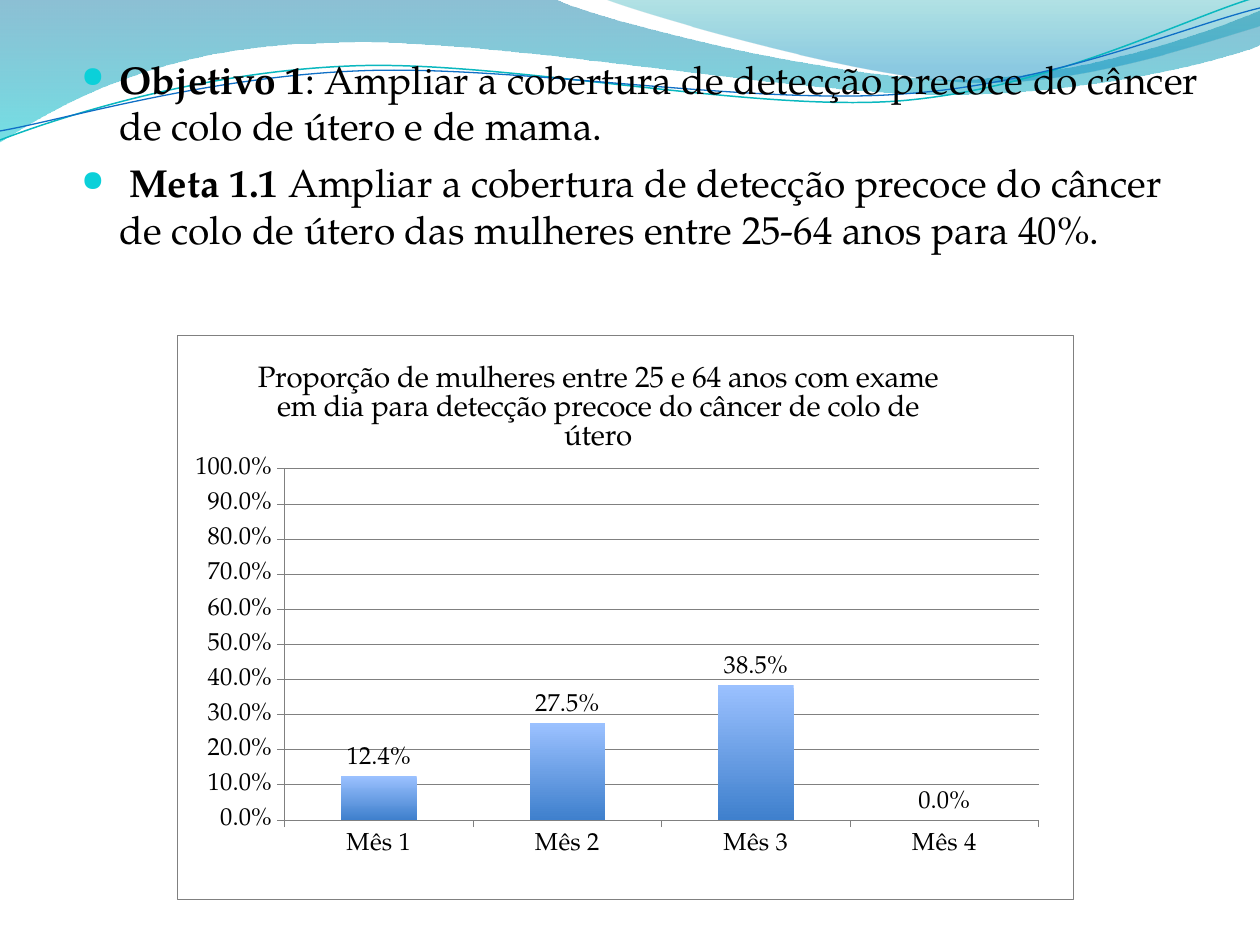
from pptx import Presentation
from pptx.chart.data import CategoryChartData
from pptx.dml.color import RGBColor
from pptx.enum.chart import XL_CHART_TYPE, XL_LABEL_POSITION, XL_TICK_MARK
from pptx.oxml import parse_xml
from pptx.oxml.ns import nsdecls, qn
from pptx.util import Emu, Pt

FONT = "TeX Gyre Pagella"
BLACK = RGBColor(0x00, 0x00, 0x00)
GRAY = RGBColor(0x80, 0x80, 0x80)
BULLET = RGBColor(0x0B, 0xD0, 0xD9)
TEAL = RGBColor(0x0A, 0xB8, 0xBF)
BLUE = RGBColor(0x0F, 0x6F, 0xC6)
WAVE_BLUE = RGBColor(0x00, 0x74, 0xA1)
WAVE_CYAN = RGBColor(0x00, 0xC6, 0xCF)
CREST_TEAL = RGBColor(0x00, 0xA1, 0xA9)
CREST_BLUE = RGBColor(0x00, 0x8B, 0xBF)
BAR_LIGHT = RGBColor(0x9B, 0xC1, 0xFF)
BAR_DARK = RGBColor(0x3F, 0x80, 0xCD)

# Outlines in px: a pair is a corner, six numbers are a Bézier curve
WAVE = [(0, 0), (554, -1), (600, 21, 837, 79, 955, 79),
        (1075, 79, 1207, 33, 1260, 11), (1261, 45),
        (1239, 55, 1096, 96, 940, 94), (784, 94, 481, 35, 324, 43),
        (163, 45, 58, 105, -1, 142)]
CREST = [(604, -1), (641, 14, 859, 78, 969, 82),
         (1079, 87, 1211, 40, 1260, 26), (1260, 0)]
TEAL_LINE = [(0, 140), (60, 117, 199, 72, 349, 66),
             (498, 59, 747, 112, 898, 101), (1050, 89, 1182, 19, 1257, -3)]
BLUE_LINE = [(0, 131), (59, 121, 207, 77, 357, 71),
             (508, 64, 752, 106, 903, 94), (1053, 84, 1186, 26, 1260, 8)]

GOALS = [
    ("Objetivo 1", ": Ampliar a cobertura de detecção precoce do câncer "
     "de colo de útero e de mama."),
    (" Meta 1.1 ", "Ampliar a cobertura de detecção precoce do câncer "
     "de colo de útero das mulheres entre 25-64 anos para 40%."),
]
CHART_TITLE = ("Proporção de mulheres entre 25 e 64 anos com exame em dia "
               "para detecção precoce do câncer de colo de útero")
MONTHS = ["Mês 1", "Mês 2", "Mês 3", "Mês 4"]
SHARES = [0.124, 0.275, 0.385, 0]


def px(n):
    return Emu(round(n * 914400 / 126))


def gradient(fill, stops):
    """Fill from top to bottom; each stop is position %, colour, opacity %."""
    fill.solid()
    gs = "".join(
        f'<a:gs pos="{pos * 1000}"><a:srgbClr val="{color}">'
        f'<a:alpha val="{alpha * 1000}"/></a:srgbClr></a:gs>'
        for pos, color, alpha in stops)
    grad = parse_xml(f'<a:gradFill {nsdecls("a")} rotWithShape="1"><a:gsLst>{gs}'
                     '</a:gsLst><a:lin ang="5400000" scaled="0"/></a:gradFill>')
    parent = fill._xPr
    parent.replace(parent.find(qn("a:solidFill")), grad)


def add_outline(slide, outline, close):
    """Draw through the end points, then bend the segments that are curves."""
    start, *ends = [(px(part[-2]), px(part[-1])) for part in outline]
    builder = slide.shapes.build_freeform(*start)
    builder.add_line_segments(ends, close=close)
    s = builder.convert_to_shape()
    s.shadow.inherit = False
    segments = list(s._element.iter(qn("a:lnTo")))
    for segment, part in zip(segments, outline[1:]):
        if len(part) == 6:
            pts = "".join(f'<a:pt x="{px(x) - s.left}" y="{px(y) - s.top}"/>'
                          for x, y in zip(part[::2], part[1::2]))
            curve = parse_xml(f'<a:cubicBezTo {nsdecls("a")}>{pts}</a:cubicBezTo>')
            segment.getparent().replace(segment, curve)
    return s


def add_wave(slide, outline, stops):
    s = add_outline(slide, outline, True)
    gradient(s.fill, stops)
    s.line.fill.background()


def add_curve(slide, outline, color, width):
    s = add_outline(slide, outline, False)
    s.fill.background()
    s.line.color.rgb = color
    s.line.width = Pt(width)


def add_bullet(p):
    pPr = p._p.get_or_add_pPr()
    pPr.set("marL", str(px(38)))
    pPr.set("indent", str(px(-38)))
    for xml in (f'<a:buClr {nsdecls("a")}><a:srgbClr val="{BULLET}"/></a:buClr>',
                f'<a:buSzPct {nsdecls("a")} val="75000"/>',
                f'<a:buChar {nsdecls("a")} char="●"/>'):
        pPr.append(parse_xml(xml))


def add_goals(slide):
    tf = slide.shapes.add_textbox(px(69), px(49), px(1152), px(197)).text_frame
    tf.word_wrap = True
    for i, (label, goal) in enumerate(GOALS):
        p = tf.add_paragraph() if i else tf.paragraphs[0]
        p.space_before = Pt(6)
        add_bullet(p)
        for text, bold in ((label, True), (goal, False)):
            r = p.add_run()
            r.text = text
            r.font.name, r.font.size, r.font.bold = FONT, Pt(22.2), bold
            r.font.color.rgb = BLACK


def set_layout(element, index, **places):
    """Place a chart part by fractions of the chart."""
    old = element.find(qn("c:layout"))
    if old is not None:
        element.remove(old)
    values = "".join(f'<c:{k} val="{v}"/>' for k, v in places.items())
    element.insert(index, parse_xml(
        f'<c:layout {nsdecls("c")}><c:manualLayout>{values}'
        '</c:manualLayout></c:layout>'))


def area_format(border):
    line = (f'<a:ln w="3175"><a:solidFill><a:srgbClr val="{GRAY}"/></a:solidFill></a:ln>'
            if border else '<a:ln><a:noFill/></a:ln>')
    return parse_xml(f'<c:spPr {nsdecls("c", "a")}><a:solidFill>'
                     f'<a:srgbClr val="FFFFFF"/></a:solidFill>{line}</c:spPr>')


def gray_line(line):
    line.color.rgb = GRAY
    line.width = Pt(0.25)


def set_font(font, size):
    font.name, font.size, font.bold = FONT, Pt(size), False
    font.color.rgb = BLACK


def add_share_chart(slide):
    data = CategoryChartData(number_format="0.0%")
    data.categories = MONTHS
    data.add_series(CHART_TITLE, SHARES)
    chart = slide.shapes.add_chart(XL_CHART_TYPE.COLUMN_CLUSTERED, px(177), px(335),
                                   px(896), px(564), data).chart
    set_font(chart.font, 14)
    chart.has_legend = False

    # Title
    chart.has_title = True
    title = chart.chart_title
    title.text_frame.text = CHART_TITLE
    set_font(title.text_frame.paragraphs[0].runs[0].font, 16.8)
    set_layout(title._element, 1, xMode="edge", yMode="edge", x=0.084, y=0.04)

    # Axes
    for axis in (chart.category_axis, chart.value_axis):
        axis.major_tick_mark = XL_TICK_MARK.OUTSIDE
        axis.minor_tick_mark = XL_TICK_MARK.NONE
        gray_line(axis.format.line)
    axis = chart.value_axis
    axis.minimum_scale, axis.maximum_scale, axis.major_unit = 0, 1, 0.1
    axis.tick_labels.number_format = "0.0%"
    axis.tick_labels.number_format_is_linked = False
    axis.has_major_gridlines = True
    gray_line(axis.major_gridlines.format.line)

    # Columns and their labels
    plot = chart.plots[0]
    plot.gap_width = 150
    plot.vary_by_categories = False
    gradient(plot.series[0].format.fill, [(0, BAR_LIGHT, 100), (100, BAR_DARK, 100)])
    plot.has_data_labels = True
    labels = plot.data_labels
    labels.show_value = True
    labels.number_format = "0.0%"
    labels.number_format_is_linked = False
    labels.position = XL_LABEL_POSITION.OUTSIDE_END

    # Plot area and chart border
    chart_el = chart._chartSpace.find(qn("c:chart"))
    plot_area = chart_el.find(qn("c:plotArea"))
    set_layout(plot_area, 0, layoutTarget="inner", xMode="edge", yMode="edge",
               x=0.12, y=0.237, w=0.842, h=0.623)
    plot_area.append(area_format(False))
    chart_el.addnext(area_format(True))


def main():
    prs = Presentation()
    prs.slide_width, prs.slide_height = px(1260), px(945)
    slide = prs.slides.add_slide(prs.slide_layouts[6])
    # Background waves
    add_wave(slide, WAVE, [(0, WAVE_BLUE, 45), (100, WAVE_CYAN, 55)])
    add_wave(slide, CREST, [(0, CREST_TEAL, 30), (80, CREST_BLUE, 45)])
    add_curve(slide, TEAL_LINE, TEAL, 0.85)
    add_curve(slide, BLUE_LINE, BLUE, 0.75)
    # Content
    add_goals(slide)
    add_share_chart(slide)
    prs.save("out.pptx")


if __name__ == "__main__":
    main()
